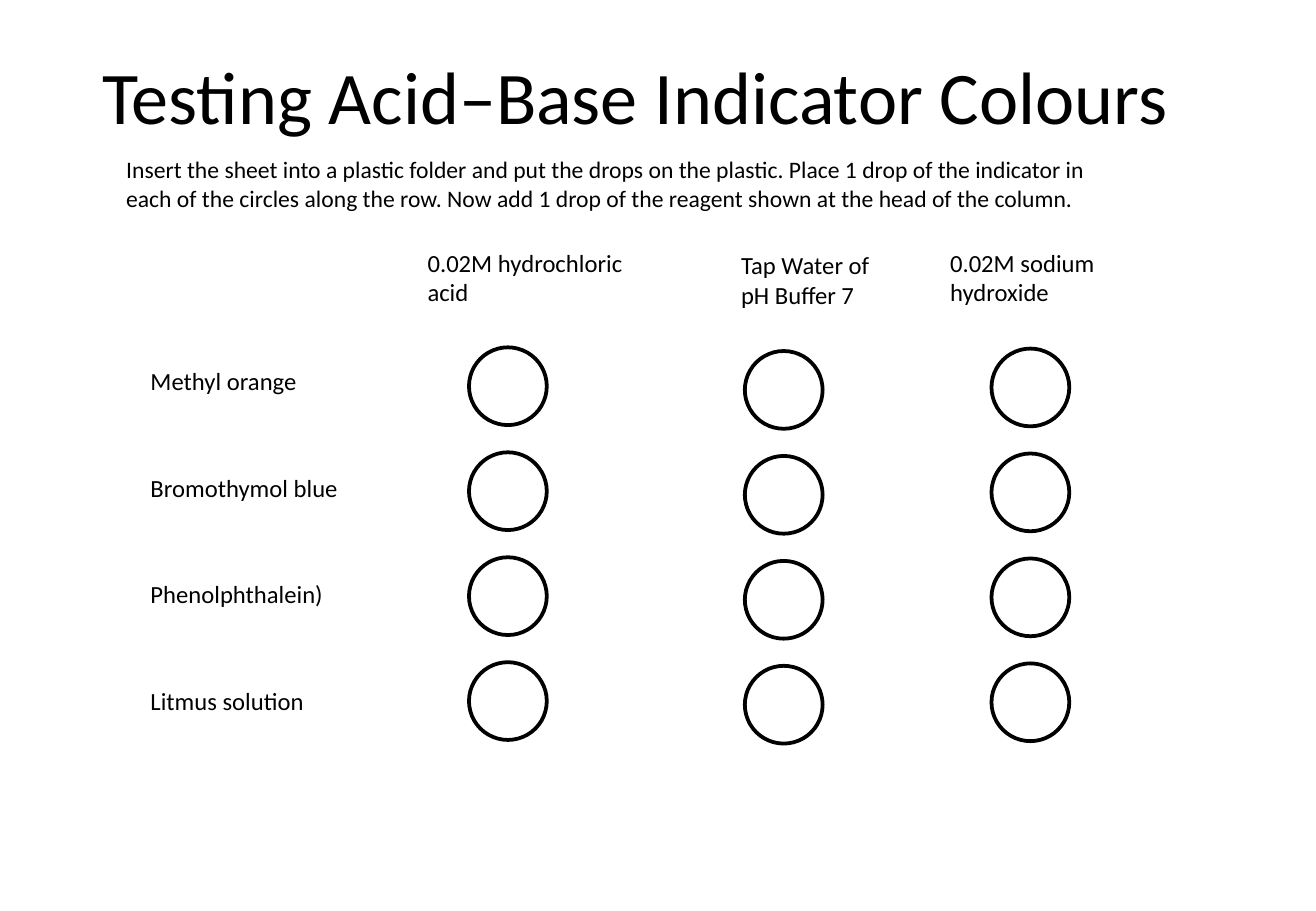
"""Build a worksheet slide for testing acid–base indicator colours."""
import pptx
import pptx.dml.color
import pptx.enum.shapes
import pptx.enum.text
import pptx.util

Inches = pptx.util.Inches
Pt = pptx.util.Pt


def colour(value):
    """Turn a hex string into a colour."""
    return pptx.dml.color.RGBColor.from_string(value)


def write(shape, text, size):
    """Put left-aligned black text in a shape."""
    frame = shape.text_frame
    frame.text = text
    frame.word_wrap = True
    frame.auto_size = pptx.enum.text.MSO_AUTO_SIZE.NONE
    paragraph = frame.paragraphs[0]
    paragraph.alignment = pptx.enum.text.PP_ALIGN.LEFT
    font = paragraph.runs[0].font
    font.name = "Calibri"
    font.size = Pt(size)
    font.color.rgb = colour("000000")


presentation = pptx.Presentation()
presentation.slide_width = Inches(10.83)
presentation.slide_height = Inches(7.5)
slide = presentation.slides.add_slide(presentation.slide_layouts[5])

title = slide.shapes.title
title.left, title.top = Inches(0.74), Inches(0.24)
title.width, title.height = Inches(9.34), Inches(1.18)
write(title, "Testing Acid–Base Indicator Colours", 44)
title.text_frame.vertical_anchor = pptx.enum.text.MSO_ANCHOR.MIDDLE
title.text_frame.paragraphs[0].line_spacing = 0.9

instructions = slide.shapes.add_textbox(Inches(0.94), Inches(1.23), Inches(8.4), Inches(0.57))
write(
    instructions,
    "Insert the sheet into a plastic folder and put the drops on the plastic. "
    "Place 1 drop of the indicator in each of the circles along the row. "
    "Now add 1 drop of the reagent shown at the head of the column.",
    14,
)

indicators = ["Methyl orange", "Bromothymol blue", "Phenolphthalein)", "Litmus solution"]
for row, indicator in enumerate(indicators):
    label = slide.shapes.add_textbox(
        Inches(1.14), Inches(2.96 + 0.88 * row), Inches(2.16), Inches(0.35)
    )
    write(label, indicator, 14.6)

reagents = [
    ("0.02M hydrochloric acid", 3.42, 1.99, 1.81, 3.86, 2.86),
    ("Tap Water of pH Buffer 7", 6, 2.01, 1.28, 6.13, 2.89),
    ("0.02M sodium hydroxide", 7.72, 1.99, 1.81, 8.16, 2.87),
]
for reagent, left, top, width, circle_left, circle_top in reagents:
    heading = slide.shapes.add_textbox(Inches(left), Inches(top), Inches(width), Inches(0.59))
    write(heading, reagent, 14.6)
    for row in range(len(indicators)):
        circle = slide.shapes.add_shape(
            pptx.enum.shapes.MSO_SHAPE.OVAL,
            Inches(circle_left),
            Inches(circle_top + 0.864 * row),
            Inches(0.64),
            Inches(0.64),
        )
        circle.shadow.inherit = False
        circle.fill.solid()
        circle.fill.fore_color.rgb = colour("FFFFFF")
        circle.line.color.rgb = colour("000000")
        circle.line.width = Pt(2.25)

presentation.save("out.pptx")
